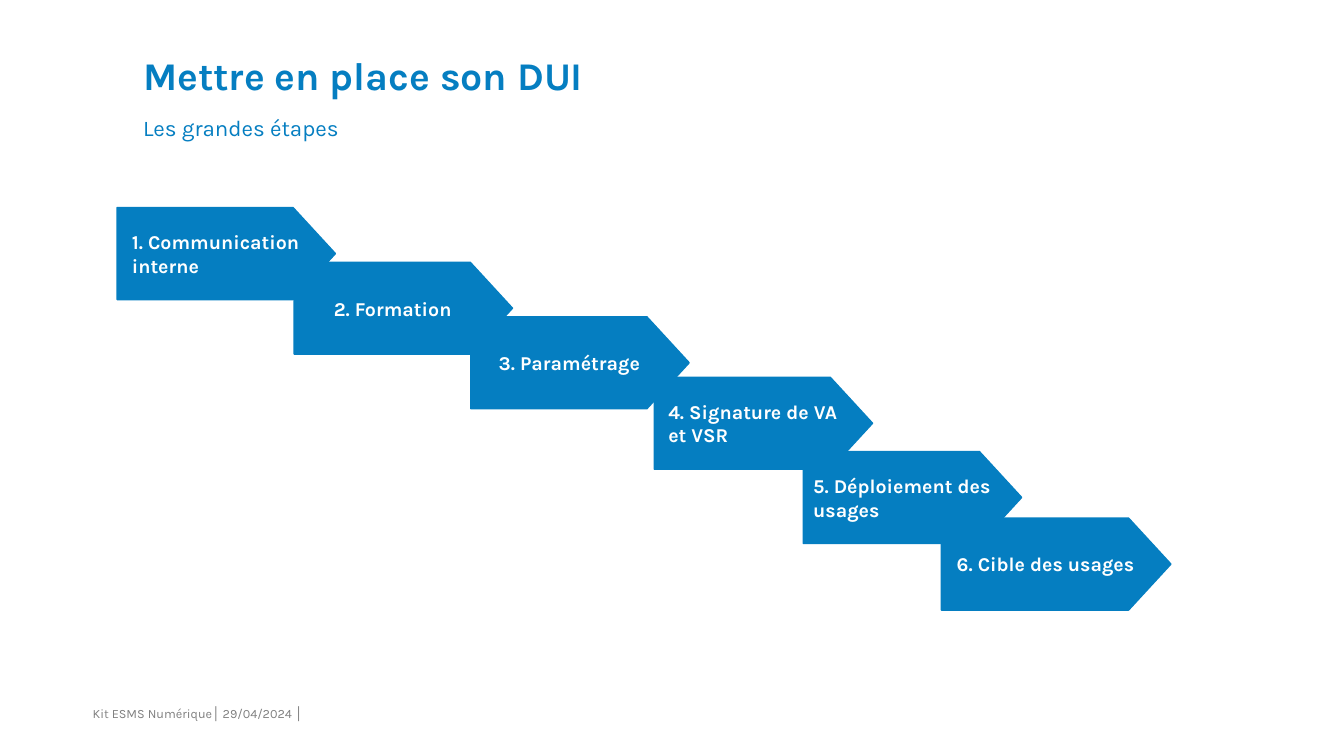
from dataclasses import dataclass

from pptx import Presentation
from pptx.dml.color import RGBColor
from pptx.enum.shapes import MSO_SHAPE
from pptx.enum.text import MSO_ANCHOR, PP_ALIGN
from pptx.util import Pt


@dataclass(frozen=True)
class Theme:
    font: str = "Karla"
    blue: RGBColor = RGBColor(0x05, 0x7E, 0xC1)
    white: RGBColor = RGBColor(0xFF, 0xFF, 0xFF)
    grey: RGBColor = RGBColor(0x80, 0x80, 0x80)
    title: int = 28
    lead: int = 16
    step: int = 14
    foot: int = 9


THEME = Theme()

# Label, left, top and width of each step, relative to the stairs
STEPS = [
    ("1. Communication interne", 0, 0, 156),
    ("2. Formation", 126.5, 39, 156),
    ("3. Paramétrage", 252.7, 78, 156),
    ("4. Signature de VA et VSR", 383.7, 121.2, 156),
    ("5. Déploiement des usages", 490.2, 174.2, 156),
    ("6. Cible des usages", 588.8, 221.8, 164),
]


def place(shape, left, top, width, height):
    shape.left, shape.top = Pt(left), Pt(top)
    shape.width, shape.height = Pt(width), Pt(height)


def write(shape, text, size, color, bold=False, pad=(0, 0, 0, 0),
          anchor=MSO_ANCHOR.TOP, lead=1.0):
    frame = shape.text_frame
    frame.text = text
    frame.word_wrap = True
    frame.vertical_anchor = anchor
    frame.margin_left, frame.margin_top, frame.margin_right, frame.margin_bottom = map(Pt, pad)
    para = frame.paragraphs[0]
    para.alignment = PP_ALIGN.LEFT
    para.line_spacing = lead
    para.space_before = Pt(0)
    font = para.runs[0].font
    font.name, font.size, font.bold = THEME.font, Pt(size), bold
    font.color.rgb = color


def add_head(slide, left, top, width):
    title = slide.shapes.title
    place(title, left, top, width, 43)
    write(title, "Mettre en place son DUI", THEME.title, THEME.blue, bold=True, lead=0.9)
    lead = slide.shapes.add_textbox(Pt(left), Pt(top + 43.2), Pt(width), Pt(44.6))
    write(lead, "Les grandes étapes", THEME.lead, THEME.blue, lead=0.9)


def add_stairs(slide, left, top, height):
    # The last step lies at the back
    for label, dx, dy, width in reversed(STEPS):
        step = slide.shapes.add_shape(MSO_SHAPE.PENTAGON, Pt(left + dx), Pt(top + dy),
                                      Pt(width), Pt(height))
        step.adjustments[0] = 0.46
        step.shadow.inherit = False
        step.fill.solid()
        step.fill.fore_color.rgb = THEME.blue
        step.line.color.rgb = THEME.blue
        step.line.width = Pt(1)
        write(step, label, THEME.step, THEME.white, bold=True,
              pad=(3.6, 2.2, 3.6, 2.2), anchor=MSO_ANCHOR.MIDDLE)
        # Centre the left-aligned text block
        step.text_frame._txBody.bodyPr.set("anchorCtr", "1")


def add_foot(slide, left, top, width, height):
    foot = slide.shapes.add_textbox(Pt(left), Pt(top), Pt(width), Pt(height))
    write(foot, "Kit ESMS Numérique│ 29/04/2024 │", THEME.foot, THEME.grey,
          pad=(0, 3.6, 7.2, 3.6))


def main():
    deck = Presentation()
    deck.slide_width, deck.slide_height = Pt(960), Pt(540)
    slide = deck.slides.add_slide(deck.slide_layouts.get_by_name("Title Only"))
    add_head(slide, 102.2, 40.3, 797.8)
    add_stairs(slide, 83.6, 148.3, 65.7)
    add_foot(slide, 66.2, 500.4, 414, 28.8)
    deck.save("out.pptx")


if __name__ == "__main__":
    main()
